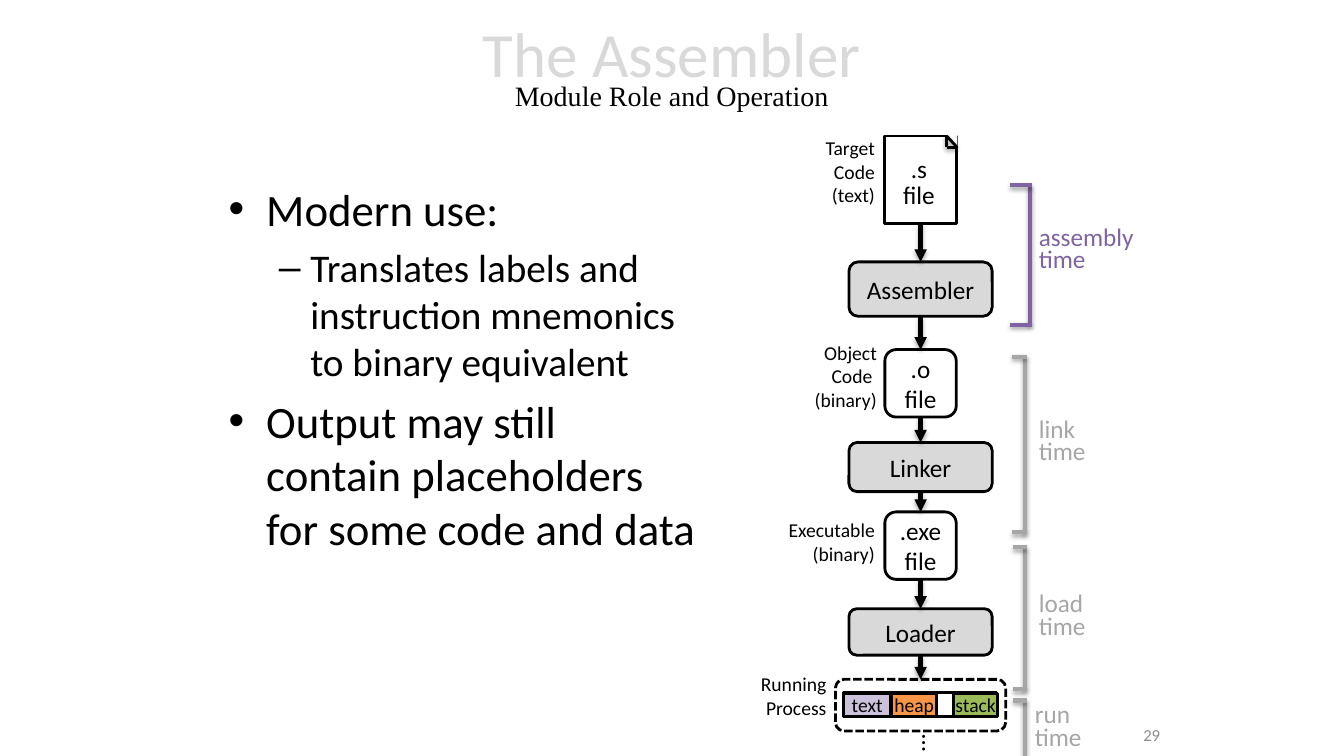
from dataclasses import dataclass
from itertools import pairwise

from lxml import etree
from pptx import Presentation
from pptx.dml.color import RGBColor
from pptx.enum.dml import MSO_LINE
from pptx.enum.shapes import MSO_CONNECTOR, MSO_SHAPE
from pptx.enum.text import MSO_ANCHOR, MSO_AUTO_SIZE, PP_ALIGN
from pptx.oxml.ns import qn
from pptx.util import Cm, Pt

RECT, ROUNDED = MSO_SHAPE.RECTANGLE, MSO_SHAPE.ROUNDED_RECTANGLE
STRAIGHT = MSO_CONNECTOR.STRAIGHT
DASH = MSO_LINE.SQUARE_DOT
LEFT, CENTER, RIGHT = PP_ALIGN.LEFT, PP_ALIGN.CENTER, PP_ALIGN.RIGHT
MIDDLE = MSO_ANCHOR.MIDDLE
GROW = MSO_AUTO_SIZE.SHAPE_TO_FIT_TEXT
BOTTOM_SITE, TOP_SITE = 2, 0
AXIS = 23.2


@dataclass(frozen=True)
class Theme:
    font: str = "Calibri"
    subtitle_font: str = "Times New Roman"
    ink: str = "000000"
    paper: str = "FFFFFF"
    tool: str = "D9D9D9"
    title: str = "D9D9D9"
    active: str = "8064A2"
    muted: str = "A6A6A6"
    number: str = "8C8C8C"
    text_segment: str = "CCC1DA"
    heap_segment: str = "F79646"
    stack_segment: str = "9BBB59"
    title_size: int = 45
    subtitle_size: int = 20
    bullet_size: int = 32
    sub_bullet_size: int = 28
    box_size: int = 18
    label_size: int = 14
    number_size: int = 12


def set_all(obj, formats):
    for name, value in formats.items():
        setattr(obj, name, value)


class SlideBuilder:
    def __init__(self, slide, theme):
        self.shapes = slide.shapes
        self.theme = theme

    def add_text(self, p, text, size, color, font=None):
        r = p.add_run()
        r.text = text
        set_all(r.font, {"name": font or self.theme.font, "size": Pt(size)})
        r.font.color.rgb = RGBColor.from_string(color)

    def add_lines(self, tf, text, size, color, **formats):
        for i, line in enumerate(text.split("\n")):
            p = tf.add_paragraph() if i else tf.paragraphs[0]
            set_all(p, formats)
            self.add_text(p, line, size, color)

    def frame(self, x, y, w, h, **formats):
        sp = self.shapes.add_textbox(Cm(x), Cm(y), Cm(w), Cm(h))
        set_all(sp.text_frame, {"word_wrap": True, **formats})
        return sp

    def label(self, text, x, y, w, h, size, color=None, **formats):
        sp = self.frame(x, y, w, h, word_wrap=False, auto_size=GROW)
        self.add_lines(sp.text_frame, text, size, color or self.theme.ink, **formats)
        return sp

    def box(self, kind, x, y, w, h, fill, text="", size=None, outlined=True, **formats):
        sp = self.shapes.add_shape(kind, Cm(x), Cm(y), Cm(w), Cm(h))
        sp.shadow.inherit = False
        sp.fill.solid()
        sp.fill.fore_color.rgb = RGBColor.from_string(fill)
        if outlined:
            sp.line.color.rgb = RGBColor.from_string(self.theme.ink)
            sp.line.width = Pt(2)
        else:
            sp.line.fill.background()
        set_all(sp.text_frame, {"vertical_anchor": MIDDLE, "word_wrap": False, **formats})
        if text:
            self.add_lines(sp.text_frame, text, size or self.theme.box_size,
                           self.theme.ink, alignment=CENTER)
        return sp

    def line(self, x1, y1, x2, y2, color, width=3):
        cx = self.shapes.add_connector(STRAIGHT, Cm(x1), Cm(y1), Cm(x2), Cm(y2))
        cx.line.color.rgb = RGBColor.from_string(color)
        cx.line.width = Pt(width)
        effects = etree.SubElement(cx._element.spPr, qn("a:effectLst"))
        shadow = etree.SubElement(effects, qn("a:outerShdw"), blurRad="40000",
                                  dist="23000", dir="5400000", rotWithShape="0")
        tint = etree.SubElement(shadow, qn("a:srgbClr"), val=self.theme.ink)
        etree.SubElement(tint, qn("a:alpha"), val="35000")
        return cx

    def arrow(self, start, end):
        cx = self.line(0, 0, 0, 0, self.theme.ink)
        cx.begin_connect(start, BOTTOM_SITE)
        cx.end_connect(end, TOP_SITE)
        ln = cx._element.spPr.find(qn("a:ln"))
        etree.SubElement(ln, qn("a:tailEnd"), type="triangle")

    def bracket(self, spine, tip, top, bottom, color, ticks):
        self.line(spine, top, spine, bottom, color)
        for y in ticks:
            self.line(spine + 0.04, y, tip, y, color)

    def bullets(self, x, y, w, h, items):
        tf = self.frame(x, y, w, h).text_frame
        for i, (level, text) in enumerate(items):
            size = self.theme.sub_bullet_size if level else self.theme.bullet_size
            margin, hang, mark = (2.06, 0.79, "–") if level else (0.95, 0.95, "•")
            p = tf.add_paragraph() if i else tf.paragraphs[0]
            set_all(p, {"level": level, "space_before": Pt(size * 0.2)})
            pPr = p._p.get_or_add_pPr()
            pPr.set("marL", str(Cm(margin)))
            pPr.set("indent", str(-Cm(hang)))
            etree.SubElement(pPr, qn("a:buFont"), typeface="Arial")
            etree.SubElement(pPr, qn("a:buChar"), char=mark)
            self.add_text(p, text, size, self.theme.ink)

    def heading(self, title, subtitle):
        t = self.theme
        p = self.frame(4.23, 0, 25.4, 3.68, vertical_anchor=MIDDLE).text_frame.paragraphs[0]
        set_all(p, {"alignment": CENTER, "line_spacing": 0.7})
        self.add_text(p, title, t.title_size, t.title)
        p.add_line_break()
        self.add_text(p, subtitle, t.subtitle_size, t.ink, t.subtitle_font)


def main():
    prs = Presentation()
    set_all(prs, {"slide_width": Cm(33.87), "slide_height": Cm(19.05)})
    t = Theme()
    s = SlideBuilder(prs.slides.add_slide(prs.slide_layouts[6]), t)

    s.heading("The Assembler", "Module Role and Operation")
    s.bullets(5.51, 4.45, 12.27, 12.27, [
        (0, "Modern use:"),
        (1, "Translates labels and instruction mnemonics to binary equivalent"),
        (0, "Output may still contain placeholders for some code and data"),
    ])
    number = s.frame(23.57, 18.01, 5.92, 1.02, vertical_anchor=MIDDLE)
    s.add_lines(number.text_frame, "29", t.number_size, t.number, alignment=RIGHT)

    stages = [
        (RECT, 3.43, 1.8, 2.21, t.paper, ""),
        (ROUNDED, 6.6, 3.61, 1.37, t.tool, "Assembler"),
        (ROUNDED, 8.81, 1.8, 1.7, t.paper, ".o\nfile"),
        (ROUNDED, 11.15, 3.61, 1.24, t.tool, "Linker"),
        (ROUNDED, 12.9, 1.8, 1.7, t.paper, ".exe\nfile"),
        (ROUNDED, 15.34, 3.61, 1.17, t.tool, "Loader"),
        (ROUNDED, 17.12, 4.29, 1.3, t.paper, ""),
    ]
    flow = [s.box(kind, AXIS - w / 2, y, w, h, fill, text)
            for kind, y, w, h, fill, text in stages]
    flow[-1].line.dash_style = DASH
    for start, end in pairwise(flow):
        s.arrow(start, end)

    s.box(RECT, 23.88, 3.4, 0.25, 0.28, t.paper, outlined=False)
    for fold in [(23.86, 3.43, 23.86, 3.71), (24.1, 3.71, 23.86, 3.71),
                 (23.86, 3.43, 24.1, 3.69)]:
        s.line(*fold, t.ink, 2)
    s.label(".s\nfile", 22.5, 3.84, 1.32, 1.6, t.box_size,
            alignment=CENTER, line_spacing=Pt(18.6))

    s.box(RECT, 21.26, 17.45, 3.86, 0.61, t.paper)
    for x, w, fill, text in [(24.03, 1.12, t.stack_segment, "stack"),
                             (21.26, 1.19, t.text_segment, "text"),
                             (22.48, 1.12, t.heap_segment, "heap")]:
        s.box(RECT, x, 17.47, w, 0.58, fill, text, t.label_size,
              margin_left=0, margin_right=0)

    for text, x, y, w, h in [("Target\nCode\n(text)", 20.52, 3.3, 1.78, 2.06),
                             ("Object\nCode \n(binary)", 20.24, 8.46, 2.11, 2.06),
                             ("Executable\n(binary)", 19.58, 12.93, 2.72, 1.45),
                             ("Running\nProcess", 18.9, 16.81, 2.18, 1.45)]:
        s.label(text, x, y, w, h, t.label_size, alignment=RIGHT)

    phases = [
        ("assembly", t.active, 25.96, 25.46, 4.67, 8.18, 2, 25.93, 5.64, 3.07),
        ("link", t.muted, 25.83, 25.5, 8.99, 13.41, 2, 25.93, 10.49, 1.7),
        ("load", t.muted, 25.83, 25.53, 13.79, 17.37, 2, 25.93, 14.88, 1.8),
        ("run", t.muted, 25.83, 25.53, 17.65, 19.05, 1, 25.83, 17.68, 1.7),
    ]
    for name, color, spine, tip, top, bottom, ticks, x, y, w in phases:
        s.bracket(spine, tip, top, bottom, color, (top, bottom)[:ticks])
        s.label(f"{name}\ntime", x, y, w, 1.42, t.box_size, color,
                alignment=LEFT, line_spacing=Pt(16))

    s.label("…", 23.01, 18.24, 0.97, 1.02, t.box_size).rotation = 90
    prs.save("out.pptx")


if __name__ == "__main__":
    main()
